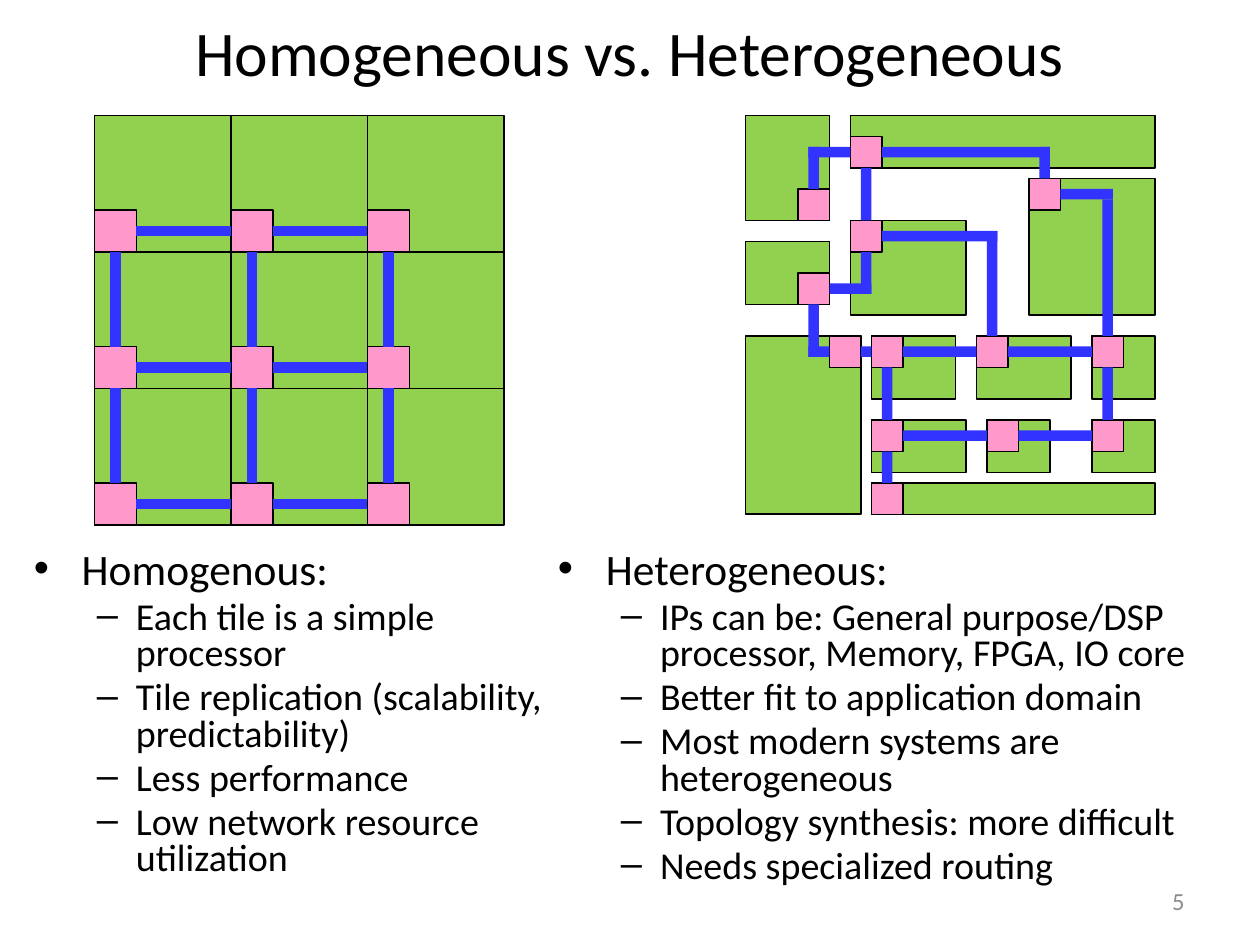
from dataclasses import dataclass
from itertools import product

from lxml.etree import SubElement
from pptx import Presentation
from pptx.dml.color import RGBColor
from pptx.enum.shapes import MSO_CONNECTOR, MSO_SHAPE
from pptx.enum.text import MSO_ANCHOR, PP_ALIGN
from pptx.oxml.ns import qn
from pptx.util import Inches, Pt

FONT = "Calibri"
BLACK, GREY = "000000", "8C8C8C"
GREEN, PINK, BLUE = "92D050", "FF99CC", "3333FF"
CELL = 1 / 12


@dataclass
class Level:
    """Look of one bullet level."""
    mark: str
    size: float
    left: float
    hang: float


@dataclass
class Column:
    """Heading and points under one diagram."""
    left: float
    width: float
    head: str
    points: list[str]


@dataclass
class Grid:
    """Group of shapes placed on a grid of cells."""
    group: object
    left: int
    top: int

    def spot(self, x: float, y: float) -> tuple:
        """Turn a grid point into a slide position."""
        return Inches((self.left + x) * CELL), Inches((self.top + y) * CELL)


HEAD = Level("•", 24.8, 0.38, 0.38)
POINT = Level("–", 21.7, 0.81, 0.31)

COLUMNS = [
    Column(0.17, 4.58, "Homogenous:", [
        "Each tile is a simple processor",
        "Tile replication (scalability, predictability)",
        "Less performance",
        "Low network resource utilization"]),
    Column(4.33, 5.42, "Heterogeneous:", [
        "IPs can be: General purpose/DSP processor, Memory, FPGA, IO core",
        "Better fit to application domain",
        "Most modern systems are heterogeneous",
        "Topology synthesis: more difficult",
        "Needs specialized routing"]),
]

CORES = [
    (0, 12, 8, 6), (10, 0, 29, 5), (10, 10, 11, 9), (27, 6, 12, 13),
    (0, 21, 11, 17), (12, 21, 8, 6), (22, 21, 9, 6), (33, 21, 6, 6),
    (12, 29, 9, 5), (23, 29, 6, 5), (33, 29, 6, 5), (12, 35, 27, 3),
    (0, 0, 8, 10),
]
NODES = [
    (5, 15), (10, 10), (10, 2), (33, 21), (27, 6), (12, 21), (5, 7),
    (33, 29), (12, 35), (8, 21), (12, 29), (23, 29), (22, 21),
]
WIRES = [
    (6, 3, 4, 1), (6, 3, 1, 4), (11, 5, 1, 5), (13, 3, 16, 1),
    (28, 3, 1, 3), (13, 11, 11, 1), (23, 11, 1, 10), (25, 22, 8, 1),
    (15, 22, 7, 1), (8, 16, 4, 1), (11, 13, 1, 4), (15, 30, 8, 1),
    (26, 30, 7, 1), (34, 24, 1, 5), (6, 18, 1, 5), (6, 22, 2, 1),
    (11, 22, 1, 1), (13, 32, 1, 3), (13, 24, 1, 5), (30, 7, 5, 1),
    (34, 8, 1, 13),
]


def color(code: str) -> RGBColor:
    """Make a colour from a hex string."""
    return RGBColor.from_string(code)


def box(grid: Grid, x: int, y: int, wide: int, high: int,
        fill: str, edge: bool = True) -> None:
    """Draw a filled rectangle measured in cells."""
    shape = grid.group.shapes.add_shape(
        MSO_SHAPE.RECTANGLE, *grid.spot(x, y),
        Inches(wide * CELL), Inches(high * CELL))
    shape.shadow.inherit = False
    shape.fill.solid()
    shape.fill.fore_color.rgb = color(fill)
    if edge:
        shape.line.color.rgb = color(BLACK)
        shape.line.width = Pt(1)
    else:
        shape.line.fill.background()


def link(grid: Grid, start: tuple, end: tuple) -> None:
    """Draw a thick wire between two grid points."""
    line = grid.group.shapes.add_connector(
        MSO_CONNECTOR.STRAIGHT, *grid.spot(*start), *grid.spot(*end))
    line.line.color.rgb = color(BLUE)
    line.line.width = Pt(6)
    SubElement(line._element.spPr, qn("a:effectLst"))


def frame(slide, left: float, top: float, width: float, high: float):
    """Add a wrapping text box and return its text frame."""
    area = slide.shapes.add_textbox(
        Inches(left), Inches(top), Inches(width), Inches(high))
    area.text_frame.word_wrap = True
    return area.text_frame


def style(para, text: str, size: float, code: str = BLACK) -> None:
    """Fill a paragraph and format its runs."""
    para.text = text
    for run in para.runs:
        run.font.name = FONT
        run.font.size = Pt(size)
        run.font.color.rgb = color(code)


def bullet(para, text: str, level: Level) -> None:
    """Write one bulleted paragraph."""
    style(para, text, level.size)
    para.line_spacing = 0.8
    para.space_before = Pt(round(level.size * 0.2, 1))
    props = para._p.get_or_add_pPr()
    props.set("marL", str(Inches(level.left)))
    props.set("indent", str(-Inches(level.hang)))
    SubElement(props, qn("a:buFont"), typeface="Arial")
    SubElement(props, qn("a:buChar"), char=level.mark)


def column(slide, data: Column) -> None:
    """Write a heading with its points."""
    text = frame(slide, data.left, 4.33, data.width, 3)
    bullet(text.paragraphs[0], data.head, HEAD)
    for point in data.points:
        para = text.add_paragraph()
        para.level = 1
        bullet(para, point, POINT)


def mesh(grid: Grid, count: int = 3, tile: int = 13, node: int = 4) -> None:
    """Draw equal tiles, each with a router, wired as a mesh."""
    spots = [(col * tile, row * tile)
             for row, col in product(range(count), repeat=2)]
    drop, half, last = tile - node, node / 2, (count - 1) * tile
    for x, y in spots:
        box(grid, x, y, tile, tile, GREEN)
    for x, y in spots:
        box(grid, x, y + drop, node, node, PINK)
    for x, y in spots:
        if x < last:
            mid = y + drop + half
            link(grid, (x + node, mid), (x + tile, mid))
        if y < last:
            link(grid, (x + half, y + tile), (x + half, y + tile + drop))


def custom(grid: Grid) -> None:
    """Draw unequal cores with routers and routed wires."""
    for core in CORES:
        box(grid, *core, GREEN)
    for node in NODES:
        box(grid, *node, 3, 3, PINK)
    for wire in WIRES:
        box(grid, *wire, BLUE, edge=False)


def main() -> None:
    """Build the slide and save it."""
    deck = Presentation()
    deck.slide_width, deck.slide_height = Inches(10), Inches(7.5)
    slide = deck.slides.add_slide(deck.slide_layouts[6])

    page = frame(slide, 7.17, 6.95, 2.33, 0.4)
    page.vertical_anchor = MSO_ANCHOR.MIDDLE
    style(page.paragraphs[0], "5", 14, GREY)
    page.paragraphs[0].alignment = PP_ALIGN.RIGHT

    title = frame(slide, 0.5, 0.17, 9, 0.58).paragraphs[0]
    style(title, "Homogeneous vs. Heterogeneous", 36.3)
    title.alignment = PP_ALIGN.CENTER
    title.line_spacing = 0.8

    for data in COLUMNS:
        column(slide, data)
    mesh(Grid(slide.shapes.add_group_shape(), 9, 11))
    custom(Grid(slide.shapes.add_group_shape(), 71, 11))
    deck.save("out.pptx")


if __name__ == "__main__":
    main()
